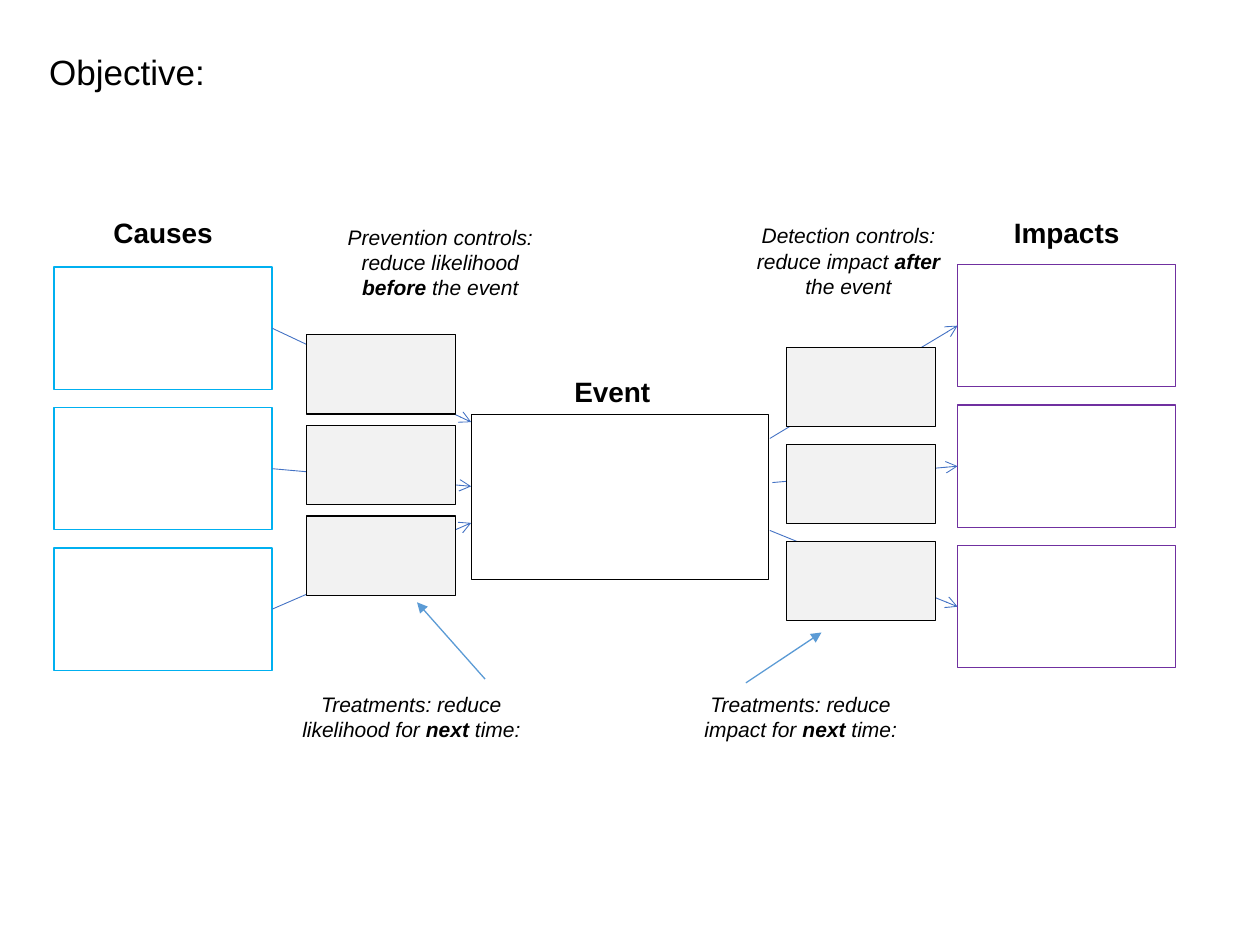
from dataclasses import dataclass
from typing import Optional

from lxml import etree
from pptx import Presentation
from pptx.dml.color import RGBColor
from pptx.enum import shapes as sh, text as tx
from pptx.oxml.ns import qn
from pptx.util import Inches, Pt


@dataclass(frozen=True)
class Theme:
    font: str = "Arial"
    ink: str = "000000"
    cause: str = "00B0F0"
    impact: str = "7030A0"
    gray: str = "F2F2F2"
    flow: str = "4472C4"
    treat: str = "5B9BD5"
    title: int = 20
    head: int = 16
    note: int = 12
    thin: float = 0.5
    line: float = 0.75


@dataclass(frozen=True)
class Box:
    left: float
    top: float
    width: float
    height: float
    line: str
    fill: Optional[str] = None
    turn: int = 0


@dataclass(frozen=True)
class Stack:
    first: Box
    step: float
    count: int = 3


@dataclass(frozen=True)
class Label:
    left: float
    top: float
    width: float
    height: float
    runs: tuple[str, ...]  # every second run is bold
    note: bool = True


T = Theme()

# Columns of boxes
CAUSES = Stack(Box(0.43, 2.12, 1.73, 0.97, T.cause), 1.115)
IMPACTS = Stack(Box(7.6, 2.1, 1.73, 0.97, T.impact), 1.115)
PREVENT = Stack(Box(2.71, 2.38, 0.63, 1.18, T.ink, T.gray, 270), 0.72)
DETECT = Stack(Box(6.52, 2.48, 0.63, 1.18, T.ink, T.gray, 270), 0.77)
EVENT = Box(3.74, 3.29, 2.36, 1.31, T.ink)

# Where the flow lines meet the event
ENTRY = ((3.74, 3.35), (3.74, 3.86), (3.74, 4.15))
EXIT = ((6.11, 3.48), (6.13, 3.83), (6.11, 4.21))

LABELS = (
    Label(0.63, 1.66, 1.33, 0.37, ("Causes",), False),
    Label(7.77, 1.66, 1.39, 0.37, ("Impacts",), False),
    Label(4.33, 2.92, 1.06, 0.37, ("Event",), False),
    Label(2.6, 1.73, 1.79, 0.71,
          ("Prevention controls: reduce likelihood ", "before", " the event")),
    Label(5.87, 1.72, 1.73, 0.71,
          ("Detection controls: reduce impact ", "after", " the event")),
    Label(2.25, 5.44, 2.03, 0.5,
          ("Treatments: reduce likelihood for ", "next", " time:")),
    Label(5.34, 5.44, 2.03, 0.5,
          ("Treatments: reduce impact for ", "next", " time:")),
)


def style(font, size: int) -> None:
    font.name = T.font
    font.size = Pt(size)
    font.color.rgb = RGBColor.from_string(T.ink)


def draw_box(slide, box: Box, top: float):
    rect = slide.shapes.add_shape(
        sh.MSO_SHAPE.RECTANGLE, Inches(box.left), Inches(top),
        Inches(box.width), Inches(box.height))
    rect.shadow.inherit = False
    rect.rotation = box.turn
    rect.line.color.rgb = RGBColor.from_string(box.line)
    rect.line.width = Pt(T.line)
    if box.fill:
        rect.fill.solid()
        rect.fill.fore_color.rgb = RGBColor.from_string(box.fill)
    else:
        rect.fill.background()
    return rect


def draw_stack(slide, stack: Stack) -> list:
    return [draw_box(slide, stack.first, stack.first.top + i * stack.step)
            for i in range(stack.count)]


def draw_line(slide, start: tuple, end: tuple, color: str, width: float,
              tip: str, kind: str):
    """Draw an arrow; tip is headEnd (at start) or tailEnd (at end)."""
    line = slide.shapes.add_connector(
        sh.MSO_CONNECTOR.STRAIGHT, *map(Inches, start + end))
    line.line.color.rgb = RGBColor.from_string(color)
    line.line.width = Pt(width)
    props = line._element.spPr
    etree.SubElement(props.find(qn("a:ln")), qn("a:" + tip), type=kind)
    etree.SubElement(props, qn("a:effectLst"))
    return line


def draw_flow(slide, boxes: list, ends: tuple, side: int, tip: str) -> None:
    for box, end in zip(boxes, ends):
        line = draw_line(slide, end, end, T.flow, T.thin, tip, "arrow")
        line.begin_connect(box, side)


def draw_label(slide, label: Label) -> None:
    frame = slide.shapes.add_textbox(
        Inches(label.left), Inches(label.top),
        Inches(label.width), Inches(label.height)).text_frame
    frame.word_wrap = True
    frame.auto_size = tx.MSO_AUTO_SIZE.SHAPE_TO_FIT_TEXT
    para = frame.paragraphs[0]
    para.alignment = tx.PP_ALIGN.CENTER
    style(para.font, T.note if label.note else T.head)
    para.font.italic = label.note
    para.font.bold = not label.note
    for i, words in enumerate(label.runs):
        run = para.add_run()
        run.text = words
        if i % 2:
            run.font.bold = True


def draw_title(slide, words: str) -> None:
    title = slide.shapes.title
    title.left, title.top = Inches(0), Inches(0.35)
    title.width, title.height = Inches(9.96), Inches(0.44)
    frame = title.text_frame
    frame.text = words
    frame.margin_left = Inches(0.39)
    frame.word_wrap = True
    frame.vertical_anchor = tx.MSO_ANCHOR.TOP
    frame.auto_size = tx.MSO_AUTO_SIZE.SHAPE_TO_FIT_TEXT
    para = frame.paragraphs[0]
    para.alignment = tx.PP_ALIGN.LEFT
    style(para.font, T.title)


def main() -> None:
    deck = Presentation()
    deck.slide_width, deck.slide_height = Inches(10), Inches(7.5)
    slide = deck.slides.add_slide(deck.slide_layouts[5])
    draw_title(slide, "Objective:")

    # Causes and impacts with their flow lines, then the event
    draw_flow(slide, draw_stack(slide, IMPACTS), EXIT, 1, "headEnd")
    draw_flow(slide, draw_stack(slide, CAUSES), ENTRY, 3, "tailEnd")
    draw_box(slide, EVENT, EVENT.top)

    # Controls lie over the flow lines
    for stack in (PREVENT, DETECT):
        draw_stack(slide, stack)

    # Labels and treatment arrows
    for label in LABELS:
        draw_label(slide, label)
    for start, end in (((3.85, 5.39), (3.31, 4.78)),
                       ((5.92, 5.42), (6.52, 5.02))):
        draw_line(slide, start, end, T.treat, T.line, "tailEnd", "triangle")

    deck.save("out.pptx")


if __name__ == "__main__":
    main()
